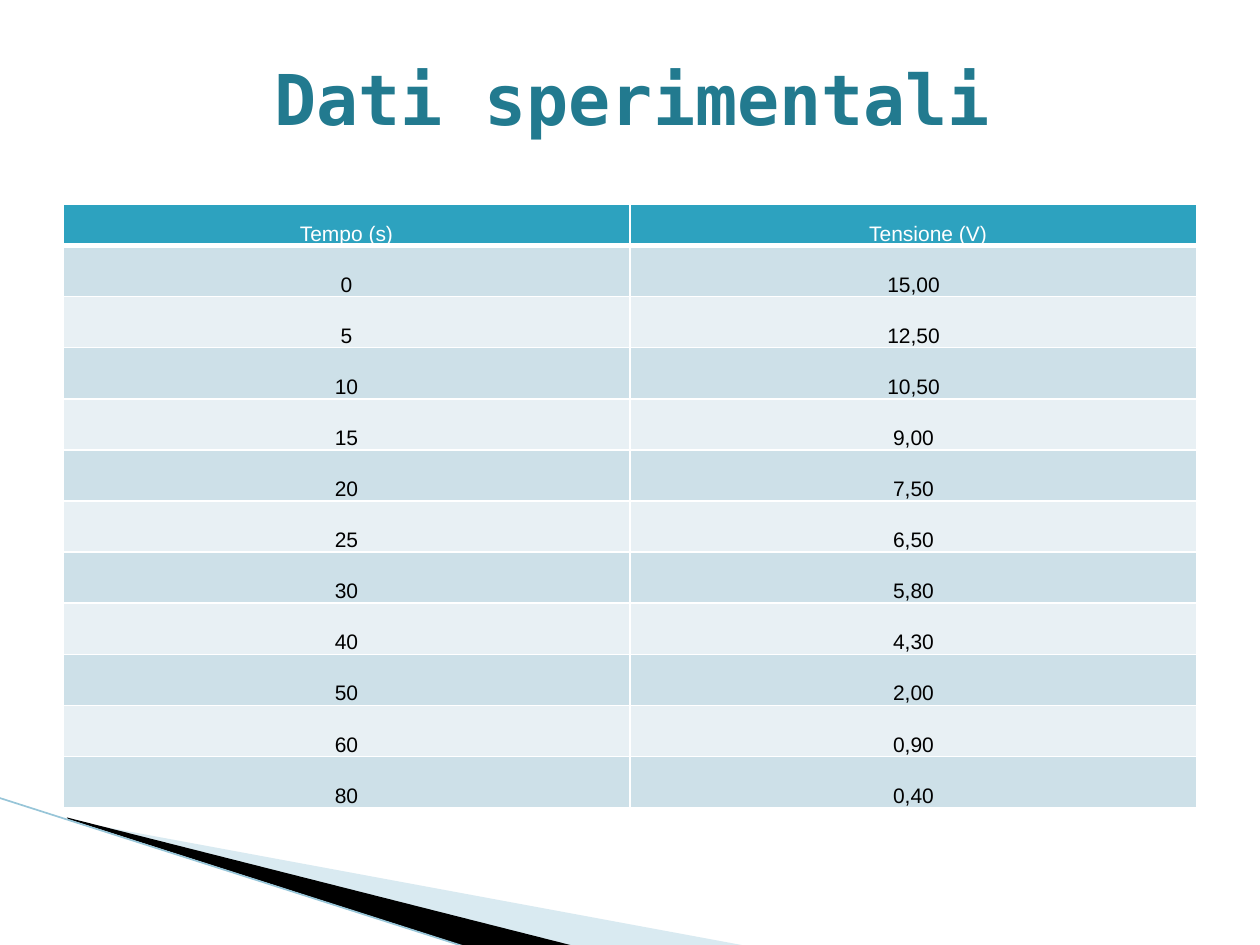
"""Build the slide of experimental voltage readings over time."""
from dataclasses import dataclass

from lxml.etree import SubElement
from pptx import Presentation
from pptx.dml.color import RGBColor
from pptx.enum.shapes import MSO_CONNECTOR
from pptx.enum.text import MSO_ANCHOR, PP_ALIGN
from pptx.oxml.ns import qn
from pptx.util import Cm, Pt


@dataclass(frozen=True)
class Theme:
    title_font: str = "DejaVu Sans Mono"
    body_font: str = "Arial"
    title_size: int = 40
    body_size: int = 12
    title: str = "227A8F"
    header: str = "2DA2BF"
    bands: tuple = ("CDE0E8", "E8F0F4")
    light: str = "FFFFFF"
    dark: str = "000000"
    pale_wedge: str = "A0CBDC"
    edge: str = "97C5D8"


THEME = Theme()
TITLE = "Dati sperimentali"
HEADERS = ("Tempo (s)", "Tensione (V)")
READINGS = [
    ("0", "15,00"),
    ("5", "12,50"),
    ("10", "10,50"),
    ("15", "9,00"),
    ("20", "7,50"),
    ("25", "6,50"),
    ("30", "5,80"),
    ("40", "4,30"),
    ("50", "2,00"),
    ("60", "0,90"),
    ("80", "0,40"),
]
WEDGES = [
    (THEME.pale_wedge, 40, [(1.4, 16.54), (15.11, 19.08), (11.58, 19.08), (1.4, 16.51)]),
    (THEME.dark, 100, [(1.35, 16.48), (11.61, 19.08), (9.45, 19.1), (1.37, 16.51)]),
]
EDGE = (-0.03, 16.08, 9.42, 19.1)
TITLE_FRAME = (1.27, 0.76, 22.94, 2.41)
TABLE_LEFT, TABLE_TOP, COLUMN_WIDTH = 1.27, 4.11, 11.43
HEADER_HEIGHT, ROW_HEIGHT = 0.84, 1.03
HEADER_INDENTS = (0, 0.59)


def color(code):
    return RGBColor.from_string(code)


def style(paragraph, font, size, code, bold=False):
    paragraph.alignment = PP_ALIGN.CENTER
    paragraph.font.name = font
    paragraph.font.size = Pt(size)
    paragraph.font.bold = bold
    paragraph.font.color.rgb = color(code)


def add_wedge(page, code, opacity, points):
    start, *rest = [(Cm(x), Cm(y)) for x, y in points]
    builder = page.shapes.build_freeform(*start)
    builder.add_line_segments(rest, close=True)
    wedge = builder.convert_to_shape()
    wedge.shadow.inherit = False
    wedge.line.fill.background()
    wedge.fill.solid()
    wedge.fill.fore_color.rgb = color(code)
    if opacity < 100:
        tint = wedge.fill._xPr.find(".//" + qn("a:srgbClr"))
        SubElement(tint, qn("a:alpha"), val=str(opacity * 1000))


def add_edge(page):
    edge = page.shapes.add_connector(MSO_CONNECTOR.STRAIGHT, *map(Cm, EDGE))
    edge.line.color.rgb = color(THEME.edge)
    edge.line.width = Pt(0.95)
    SubElement(edge._element.spPr, qn("a:effectLst"))


def add_borders(cell, bottom):
    properties = cell._tc.get_or_add_tcPr()
    for side, width in (("L", 1), ("R", 1), ("T", 1), ("B", bottom)):
        line = SubElement(properties, qn(f"a:ln{side}"), w=str(Pt(width)))
        fill = SubElement(line, qn("a:solidFill"))
        SubElement(fill, qn("a:srgbClr"), val=THEME.light)


def fill_cell(cell, text, fill, ink, indent=0, bottom=1):
    cell.text = text
    cell.vertical_anchor = MSO_ANCHOR.BOTTOM
    cell.margin_left = Cm(indent)
    cell.margin_right = cell.margin_top = cell.margin_bottom = 0
    style(cell.text_frame.paragraphs[0], THEME.body_font, THEME.body_size, ink)
    add_borders(cell, bottom)
    cell.fill.solid()
    cell.fill.fore_color.rgb = color(fill)


def add_readings(page):
    width = COLUMN_WIDTH * len(HEADERS)
    height = HEADER_HEIGHT + ROW_HEIGHT * len(READINGS)
    frame = (TABLE_LEFT, TABLE_TOP, width, height)
    table = page.shapes.add_table(len(READINGS) + 1, len(HEADERS), *map(Cm, frame)).table
    for column in table.columns:
        column.width = Cm(COLUMN_WIDTH)
    table.rows[0].height = Cm(HEADER_HEIGHT)
    for index, (text, indent) in enumerate(zip(HEADERS, HEADER_INDENTS)):
        fill_cell(table.cell(0, index), text, THEME.header, THEME.light, indent, 3)
    for row, reading in enumerate(READINGS, 1):
        table.rows[row].height = Cm(ROW_HEIGHT)
        for index, text in enumerate(reading):
            fill_cell(table.cell(row, index), text, THEME.bands[(row - 1) % 2], THEME.dark)


def add_title(page):
    box = page.shapes.add_textbox(*map(Cm, TITLE_FRAME))
    box.text_frame.word_wrap = True
    box.text_frame.vertical_anchor = MSO_ANCHOR.MIDDLE
    box.text_frame.text = TITLE
    style(box.text_frame.paragraphs[0], THEME.title_font, THEME.title_size, THEME.title, True)


def main():
    deck = Presentation()
    deck.slide_width, deck.slide_height = Cm(25.4), Cm(19.05)
    page = deck.slides.add_slide(deck.slide_layouts[6])
    for wedge in WEDGES:
        add_wedge(page, *wedge)
    add_edge(page)
    add_readings(page)
    add_title(page)
    deck.save("out.pptx")


if __name__ == "__main__":
    main()
